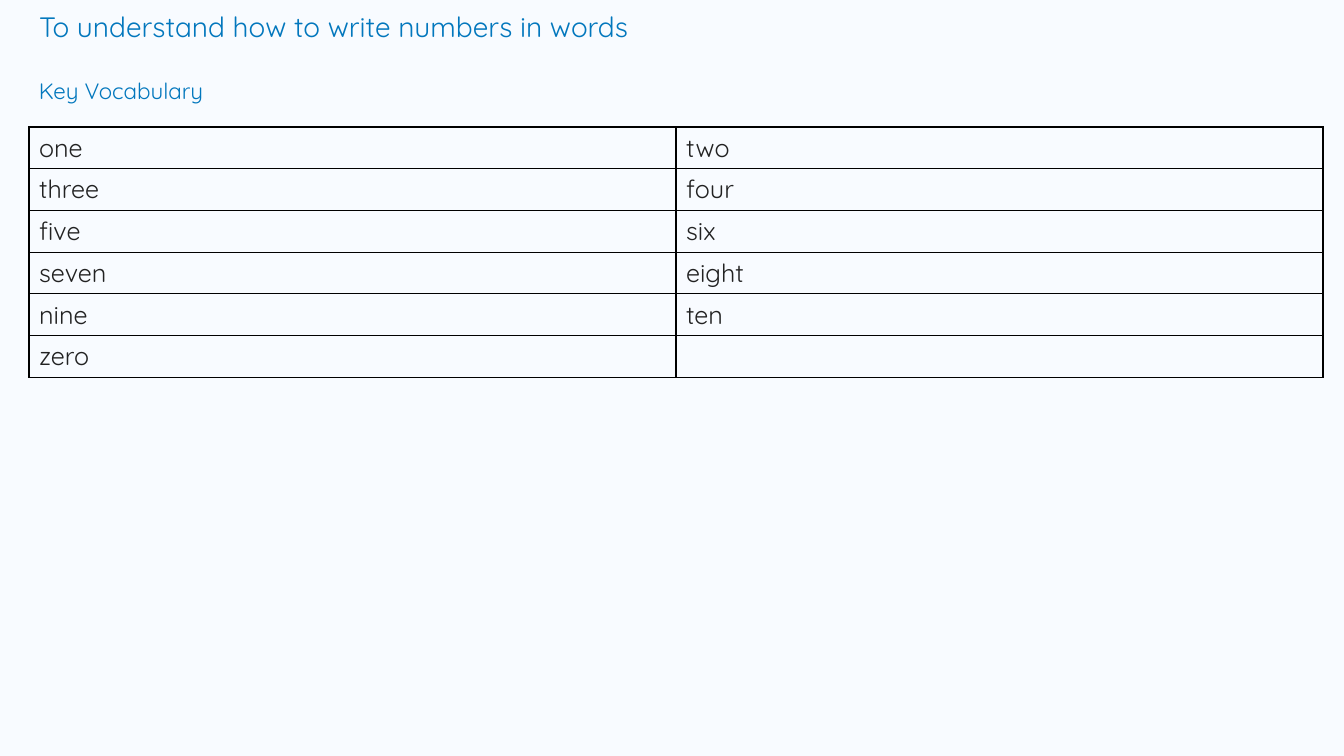
from lxml.etree import SubElement
from pptx import Presentation
from pptx.dml.color import RGBColor
from pptx.enum.text import MSO_ANCHOR, MSO_AUTO_SIZE, PP_ALIGN
from pptx.oxml.ns import qn
from pptx.util import Pt

# Content
OBJECTIVE = "To understand how to write numbers in words"
HEADING = "Key Vocabulary"
VOCABULARY = [
    ("one", "two"),
    ("three", "four"),
    ("five", "six"),
    ("seven", "eight"),
    ("nine", "ten"),
    ("zero", ""),
]

# Look
FONT = "Quicksand"
BACKGROUND, BLUE, INK, BORDER = "F8FBFF", "0277BD", "222222", "000000"

# Layout in px
LEFT = 29
COLUMN_WIDTH, ROW_HEIGHT = 647, 41
TABLE_TOP = 127


def px(length):
    return round(length * 914400 / 100.8)


def color(code):
    return RGBColor.from_string(code)


def style(para, size, code):
    para.alignment = PP_ALIGN.LEFT
    para.font.name = FONT
    para.font.size = Pt(size)
    para.font.color.rgb = color(code)


def write(box, text, area, size):
    box.left, box.top, box.width, box.height = map(px, area)
    frame = box.text_frame
    frame.text = text
    frame.word_wrap = True
    frame.auto_size = MSO_AUTO_SIZE.NONE
    frame.vertical_anchor = MSO_ANCHOR.TOP
    style(frame.paragraphs[0], size, BLUE)


def outline(cell):
    properties = cell._tc.get_or_add_tcPr()
    for side in ("a:lnL", "a:lnR", "a:lnT", "a:lnB"):
        line = SubElement(properties, qn(side), w=str(Pt(1)))
        fill = SubElement(line, qn("a:solidFill"))
        SubElement(fill, qn("a:srgbClr"), val=BORDER)


def main():
    deck = Presentation()
    deck.slide_width, deck.slide_height = px(1344), px(756)
    page = deck.slides.add_slide(deck.slide_layouts[5])
    page.background.fill.solid()
    page.background.fill.fore_color.rgb = color(BACKGROUND)

    # Objective and heading
    write(page.shapes.title, OBJECTIVE, (LEFT, 4, 1244, 44), 20)
    write(page.shapes.add_textbox(0, 0, 0, 0), HEADING, (LEFT, 72, 299, 46), 16)

    # Vocabulary table
    rows, columns = len(VOCABULARY), len(VOCABULARY[0])
    table = page.shapes.add_table(
        rows, columns, px(LEFT), px(TABLE_TOP),
        px(columns * COLUMN_WIDTH), px(rows * ROW_HEIGHT)).table
    table.first_row = table.horz_banding = False
    for row, words in enumerate(VOCABULARY):
        table.rows[row].height = px(ROW_HEIGHT)
        for column, word in enumerate(words):
            cell = table.cell(row, column)
            cell.text = word
            style(cell.text_frame.paragraphs[0], 18, INK)
            outline(cell)
            cell.fill.background()

    deck.save("out.pptx")


if __name__ == "__main__":
    main()
